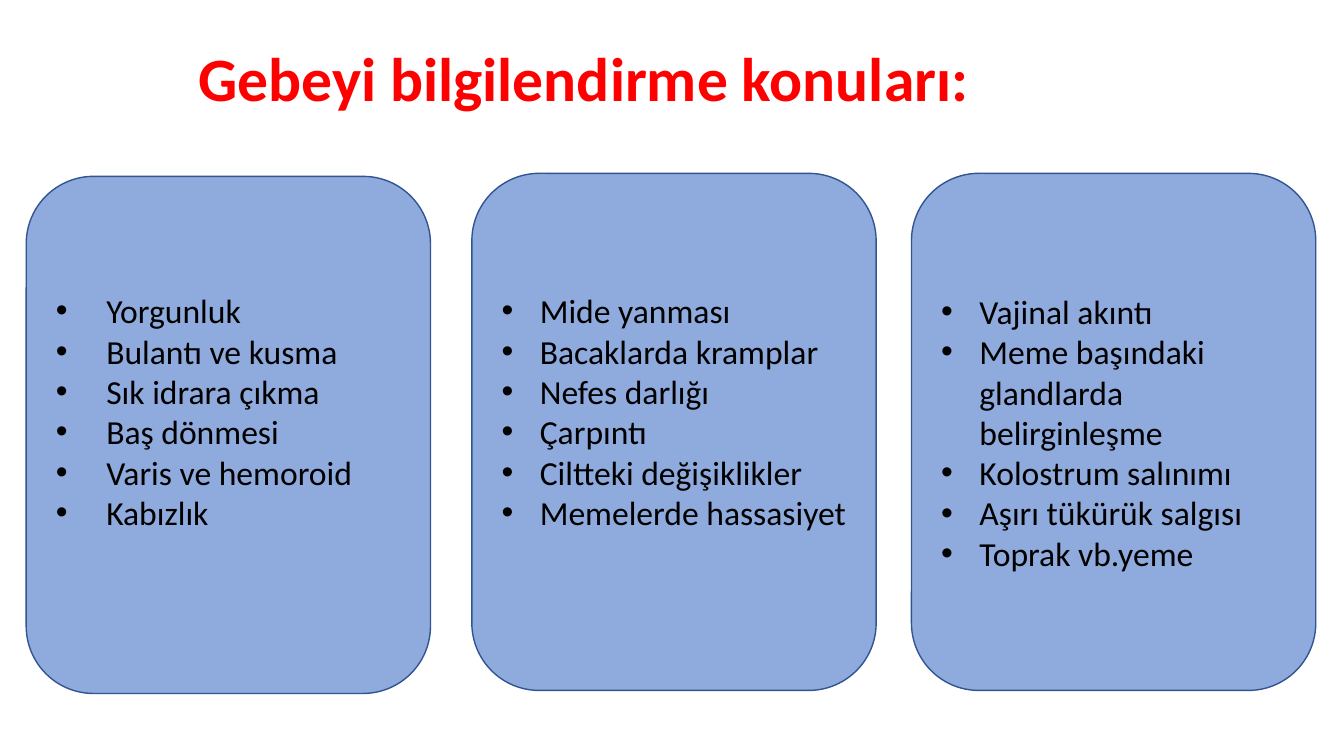
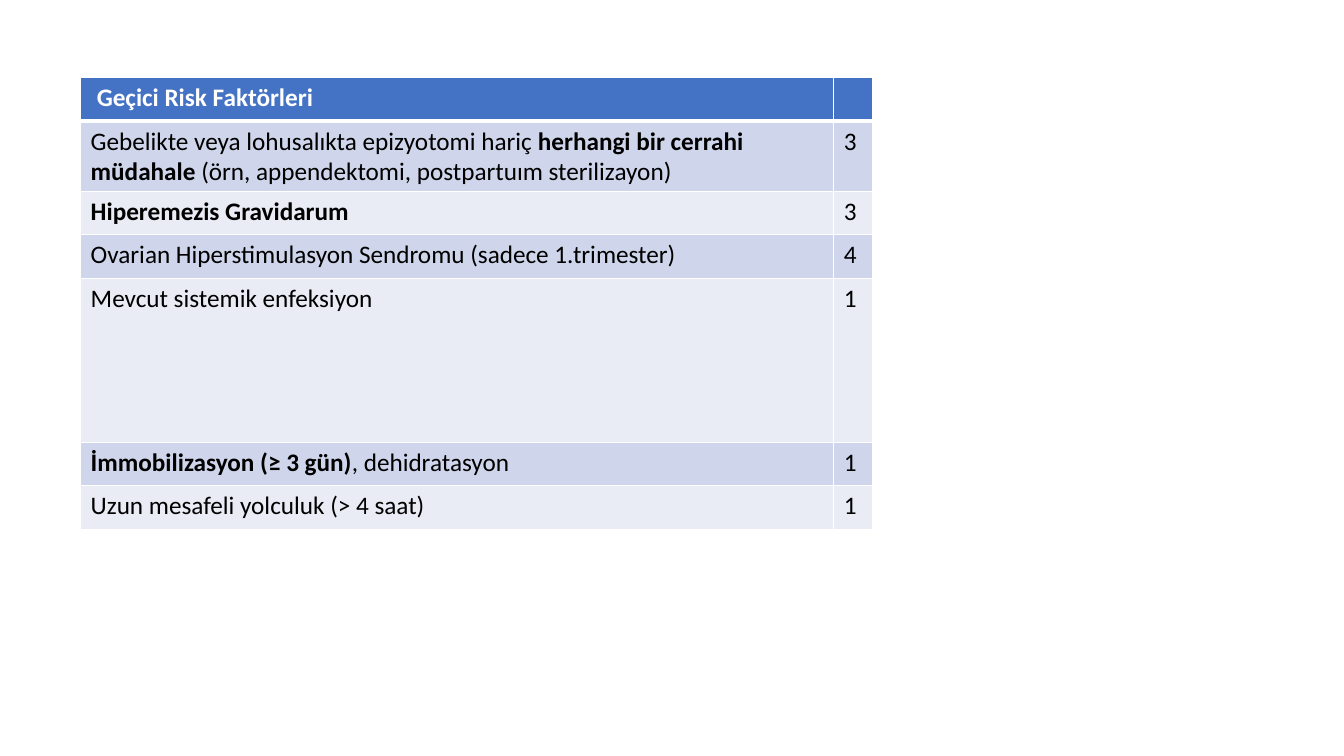
from pptx import Presentation
from pptx import util as u
from pptx.dml.color import RGBColor
from pptx.enum import shapes, text
from pptx.oxml import parse_xml
from pptx.oxml.ns import nsdecls

PX = 9144  # EMU per px, 100 px to the inch
FONT = "Calibri"
RED = RGBColor(0xFF, 0x00, 0x00)
BLACK = RGBColor(0x00, 0x00, 0x00)
WHITE = RGBColor(0xFF, 0xFF, 0xFF)
CARD_FILL = RGBColor(0x8F, 0xAA, 0xDC)
CARD_LINE = RGBColor(0x32, 0x54, 0x91)
HEADER = RGBColor(0x44, 0x72, 0xC4)
BANDS = RGBColor(0xCF, 0xD5, 0xEA), RGBColor(0xE9, 0xEB, 0xF5)


def px(*lengths):
    return [u.Emu(length * PX) for length in lengths]


def apply(target, values):
    for name, value in values.items():
        setattr(target, name, value)


class Deck:
    """Shared style and the slide being built."""

    def __init__(self, width, height):
        self.prs = Presentation()
        self.prs.slide_width, self.prs.slide_height = px(width, height)
        self.slide = None

    def new_slide(self):
        self.slide = self.prs.slides.add_slide(self.prs.slide_layouts[6])

    def add_words(self, paragraph, words, size, color=BLACK, bold=False):
        run = paragraph.add_run()
        run.text = words
        apply(run.font, {"name": FONT, "size": u.Pt(size), "bold": bold})
        run.font.color.rgb = color

    def title(self, words, left, top, width, height):
        frame = self.slide.shapes.add_textbox(*px(left, top, width, height)).text_frame
        apply(frame, {"word_wrap": True, "vertical_anchor": text.MSO_ANCHOR.MIDDLE})
        heading = frame.paragraphs[0]
        heading.line_spacing = 0.9
        self.add_words(heading, words, 44, RED, True)

    def card(self, items, left, top, width, height, indent, bottom_inset):
        card = self.slide.shapes.add_shape(
            shapes.MSO_SHAPE.ROUNDED_RECTANGLE, *px(left, top, width, height))
        card.shadow.inherit = False
        card.fill.solid()
        card.fill.fore_color.rgb = CARD_FILL
        card.line.color.rgb = CARD_LINE
        card.line.width = u.Pt(1)
        frame = card.text_frame
        apply(frame, {"word_wrap": True, "vertical_anchor": text.MSO_ANCHOR.MIDDLE,
                      "margin_bottom": px(bottom_inset)[0]})
        for i, item in enumerate(items):
            bullet = frame.add_paragraph() if i else frame.paragraphs[0]
            bullet.alignment = text.PP_ALIGN.LEFT
            props = bullet._p.get_or_add_pPr()
            props.set("marL", str(indent * PX))
            props.set("indent", str(-indent * PX))
            for mark in ('buFont {} typeface="Arial"', 'buChar {} char="•"'):
                props.append(parse_xml(f"<a:{mark.format(nsdecls('a'))}/>"))
            self.add_words(bullet, item, 24)

    def cell(self, cell, runs, fill, color, borders, left_inset):
        """Fill one table cell; runs are (words, bold) pairs."""
        props = cell._tc.get_or_add_tcPr()
        for side, points in zip("LRTB", borders):
            props.append(parse_xml(
                f'<a:ln{side} {nsdecls("a")} w="{u.Pt(points)}"><a:solidFill>'
                f'<a:srgbClr val="{WHITE}"/></a:solidFill></a:ln{side}>'))
        cell.fill.solid()
        cell.fill.fore_color.rgb = fill
        cell.margin_left = px(left_inset)[0]
        for words, bold in runs:
            self.add_words(cell.text_frame.paragraphs[0], words, 18, color, bold)

    def table(self, header, rows, left, top, widths, heights):
        table = self.slide.shapes.add_table(
            len(rows) + 1, len(widths),
            *px(left, top, sum(widths), sum(heights))).table
        apply(table, {"first_row": False, "horz_banding": False})
        for column, width in zip(table.columns, px(*widths)):
            column.width = width
        for row, height in zip(table.rows, px(*heights)):
            row.height = height
        for c, runs in enumerate(([(header, True)], [])):
            self.cell(table.cell(0, c), runs, HEADER, WHITE, (1, 1, 1, 3), 16)
        for r, (factor, score) in enumerate(rows, 1):
            borders = (1, 1, 3 if r == 1 else 1, 1)
            for c, runs in enumerate((factor, [(score, False)])):
                self.cell(table.cell(r, c), runs, BANDS[(r - 1) % 2], BLACK, borders, 10)


# Left, top, bullet indent, bottom inset, items
TOPICS = [
    (26, 175, 50, 52, ["Yorgunluk", "Bulantı ve kusma", "Sık idrara çıkma",
                       "Baş dönmesi", "Varis ve hemoroid", "Kabızlık"]),
    (468, 172, 38, 46, ["Mide yanması", "Bacaklarda kramplar", "Nefes darlığı",
                        "Çarpıntı", "Ciltteki değişiklikler", "Memelerde hassasiyet"]),
    (904, 172, 38, 5, ["Vajinal akıntı", "Meme başındaki glandlarda belirginleşme",
                       "Kolostrum salınımı", "Aşırı tükürük salgısı", "Toprak vb.yeme"]),
]

RISK_FACTORS = [
    ([("Gebelikte veya lohusalıkta epizyotomi hariç ", False),
      ("herhangi bir cerrahi müdahale ", True),
      ("(örn, appendektomi, postpartuım sterilizayon)", False)], "3"),
    ([("Hiperemezis Gravidarum", True)], "3"),
    ([("Ovarian Hiperstimulasyon Sendromu (sadece 1.trimester)", False)], "4"),
    ([("Mevcut sistemik enfeksiyon", False)], "1"),
    ([("İmmobilizasyon (≥ 3 gün)", True), (", dehidratasyon", False)], "1"),
    ([("Uzun mesafeli yolculuk (> 4 saat)", False)], "1"),
]


def main():
    deck = Deck(1333, 750)

    # Topics to tell the patient about
    deck.new_slide()
    deck.title("Gebeyi bilgilendirme konuları:", 187, 20, 1055, 122)
    for left, top, indent, bottom_inset, items in TOPICS:
        deck.card(items, left, top, 401, 513, indent, bottom_inset)

    # Temporary risk factors and their scores
    deck.new_slide()
    deck.table("Geçici Risk Faktörleri", RISK_FACTORS, 80, 77,
               widths=[747, 38], heights=[43, 70, 43, 43, 163, 43, 43])

    deck.prs.save("out.pptx")


if __name__ == "__main__":
    main()
